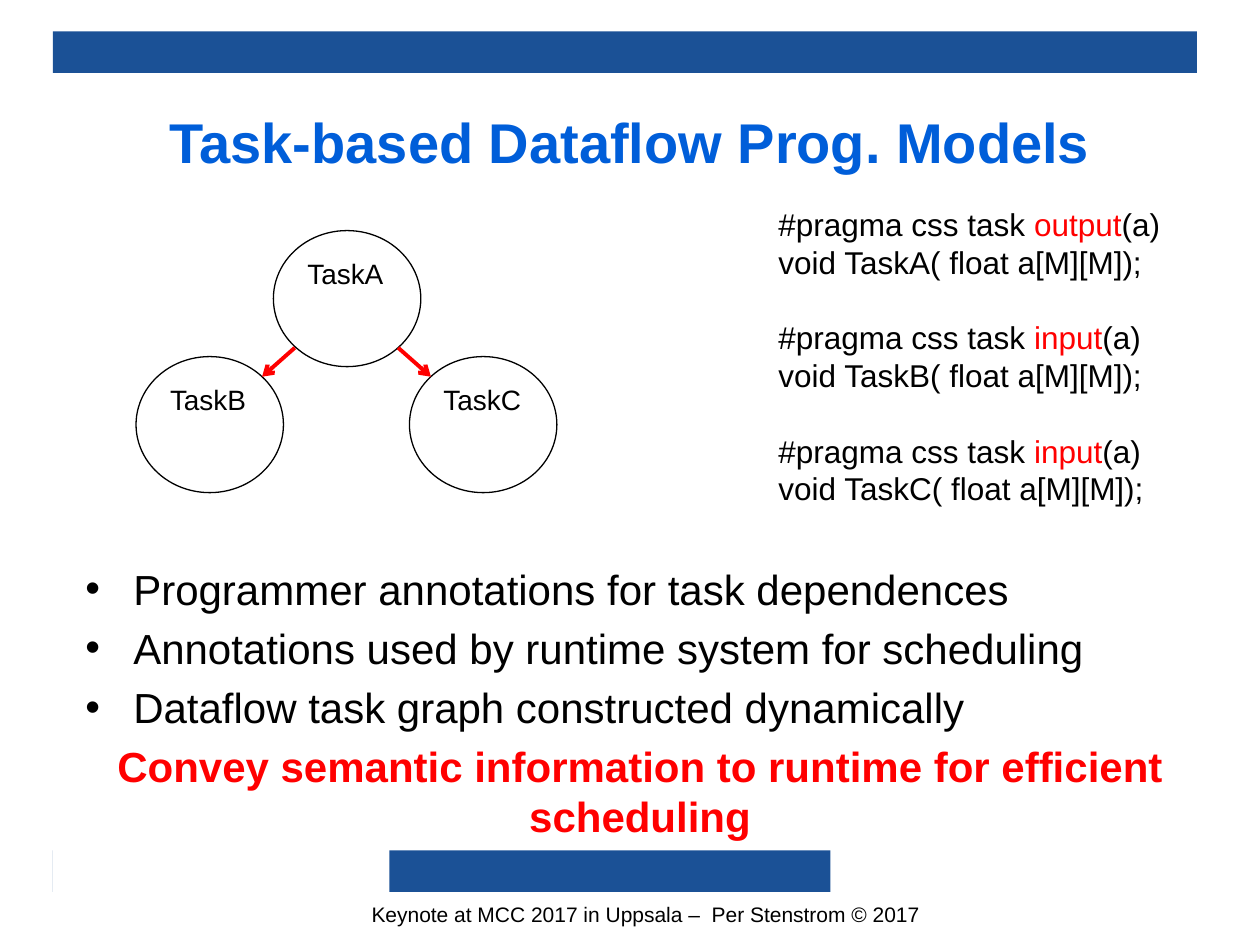
import pptx
import pptx.util
from lxml import etree
from pptx.dml.color import RGBColor
from pptx.enum.shapes import MSO_CONNECTOR, MSO_SHAPE
from pptx.enum.text import MSO_ANCHOR, PP_ALIGN
from pptx.oxml.ns import qn
from pptx.util import Inches, Pt

BAR_BLUE = RGBColor(0x1B, 0x51, 0x96)
TITLE_BLUE = RGBColor(0x00, 0x5E, 0xD9)
WHITE = RGBColor(0xFF, 0xFF, 0xFF)
BLACK = RGBColor(0, 0, 0)
RED = RGBColor(0xFF, 0, 0)

TITLE = "Task-based Dataflow Prog. Models"
FOOTER = "Keynote at MCC 2017 in Uppsala –  Per Stenstrom © 2017"
BARS = [  # left, top, width, height, fill
    (0.42, 6.75, 6.17, 0.33, BAR_BLUE),
    (0.42, 0.25, 9.08, 0.33, BAR_BLUE),
    (0.42, 6.42, 2.67, 0.67, WHITE),
]
TASKS = {"TaskA": (2.17, 1.83), "TaskC": (3.25, 2.83), "TaskB": (1.08, 2.83)}
TASK_SIZE = (1.17, 1.08)
ARROWS = [((2.34, 2.76), (2.08, 2.99)), ((3.16, 2.76), (3.42, 2.99))]
DECLARATIONS = [("output", "TaskA"), ("input", "TaskB"), ("input", "TaskC")]
BULLETS = [
    "Programmer annotations for task dependences",
    "Annotations used by runtime system for scheduling",
    "Dataflow task graph constructed dynamically",
]
CONCLUSION = "Convey semantic information to runtime for efficient scheduling"


def add_run(paragraph, text, size, color=BLACK, bold=False):
    run = paragraph.add_run()
    run.text = text
    font_format = {"name": "Arial", "size": Pt(size), "bold": bold}
    for name, value in font_format.items():
        setattr(run.font, name, value)
    run.font.color.rgb = color


def next_paragraph(frame):
    """Return the empty first paragraph, or a new one after it."""
    first = frame.paragraphs[0]
    return frame.add_paragraph() if first.runs else first


def add_text_box(slide, left, top, width, height, wrap):
    box = slide.shapes.add_textbox(*map(Inches, (left, top, width, height)))
    box.text_frame.word_wrap = wrap
    return box.text_frame


def add_filled_shape(slide, kind, left, top, width, height, fill, line=None):
    shape = slide.shapes.add_shape(kind, *map(Inches, (left, top, width, height)))
    shape.shadow.inherit = False
    shape.fill.solid()
    shape.fill.fore_color.rgb = fill
    if line is None:
        shape.line.fill.background()
    else:
        shape.line.color.rgb = line
        shape.line.width = Pt(0.75)
    return shape


def add_arrow(slide, start, end):
    arrow = slide.shapes.add_connector(
        MSO_CONNECTOR.STRAIGHT, *map(Inches, start + end))
    arrow.line.color.rgb = RED
    arrow.line.width = Pt(2.25)
    etree.SubElement(arrow.line._get_or_add_ln(), qn("a:tailEnd"), type="arrow")
    etree.SubElement(arrow._element.spPr, qn("a:effectLst"))


def add_bullet(paragraph):
    properties = paragraph._p.get_or_add_pPr()
    properties.set("marL", str(Inches(0.38)))
    properties.set("indent", str(-Inches(0.38)))
    etree.SubElement(properties, qn("a:buFont"), typeface="Arial")
    etree.SubElement(properties, qn("a:buChar"), char="•")


def add_title(slide):
    title = slide.shapes.title
    place = {"left": 0.5, "top": 0.58, "width": 9, "height": 1.08}
    for name, value in place.items():
        setattr(title, name, Inches(value))
    title.text_frame.vertical_anchor = MSO_ANCHOR.MIDDLE
    paragraph = title.text_frame.paragraphs[0]
    paragraph.alignment = PP_ALIGN.CENTER
    add_run(paragraph, TITLE, 32, TITLE_BLUE, True)


def add_task_graph(slide):
    for name, position in TASKS.items():
        task = add_filled_shape(
            slide, MSO_SHAPE.OVAL, *position, *TASK_SIZE, WHITE, BLACK)
        task.text_frame.vertical_anchor = MSO_ANCHOR.TOP
        paragraph = task.text_frame.paragraphs[0]
        paragraph.alignment = PP_ALIGN.LEFT
        add_run(paragraph, name, 16)
    for start, end in ARROWS:
        add_arrow(slide, start, end)


def add_declarations(slide):
    frame = add_text_box(slide, 6.08, 1.58, 3.27, 2.83, False)
    for index, (direction, task) in enumerate(DECLARATIONS):
        pragma = next_paragraph(frame)
        if index:
            pragma.space_before = Pt(21.5)
        add_run(pragma, "#pragma css task ", 18)
        add_run(pragma, direction, 18, RED)
        add_run(pragma, "(a)", 18)
        add_run(next_paragraph(frame), f"void {task}( float a[M][M]);", 18)


def add_points(slide):
    frame = add_text_box(slide, 0.58, 4.42, 9, 2.17, True)
    for index, text in enumerate(BULLETS):
        paragraph = next_paragraph(frame)
        if index:
            paragraph.space_before = Pt(5)
        add_bullet(paragraph)
        add_run(paragraph, text, 24)
    conclusion = next_paragraph(frame)
    conclusion.space_before = Pt(5)
    conclusion.alignment = PP_ALIGN.CENTER
    add_run(conclusion, CONCLUSION, 24, RED, True)


def main():
    presentation = pptx.Presentation()
    presentation.slide_width = Inches(10)
    presentation.slide_height = Inches(7.5)
    slide = presentation.slides.add_slide(presentation.slide_layouts[5])

    footer = add_text_box(slide, 2.85, 7.11, 4.69, 0.3, False)
    add_run(footer.paragraphs[0], FOOTER, 12)
    for *place, fill in BARS:
        add_filled_shape(slide, MSO_SHAPE.RECTANGLE, *place, fill)
    add_title(slide)
    add_task_graph(slide)
    add_declarations(slide)
    add_points(slide)
    presentation.save("out.pptx")


if __name__ == "__main__":
    main()
